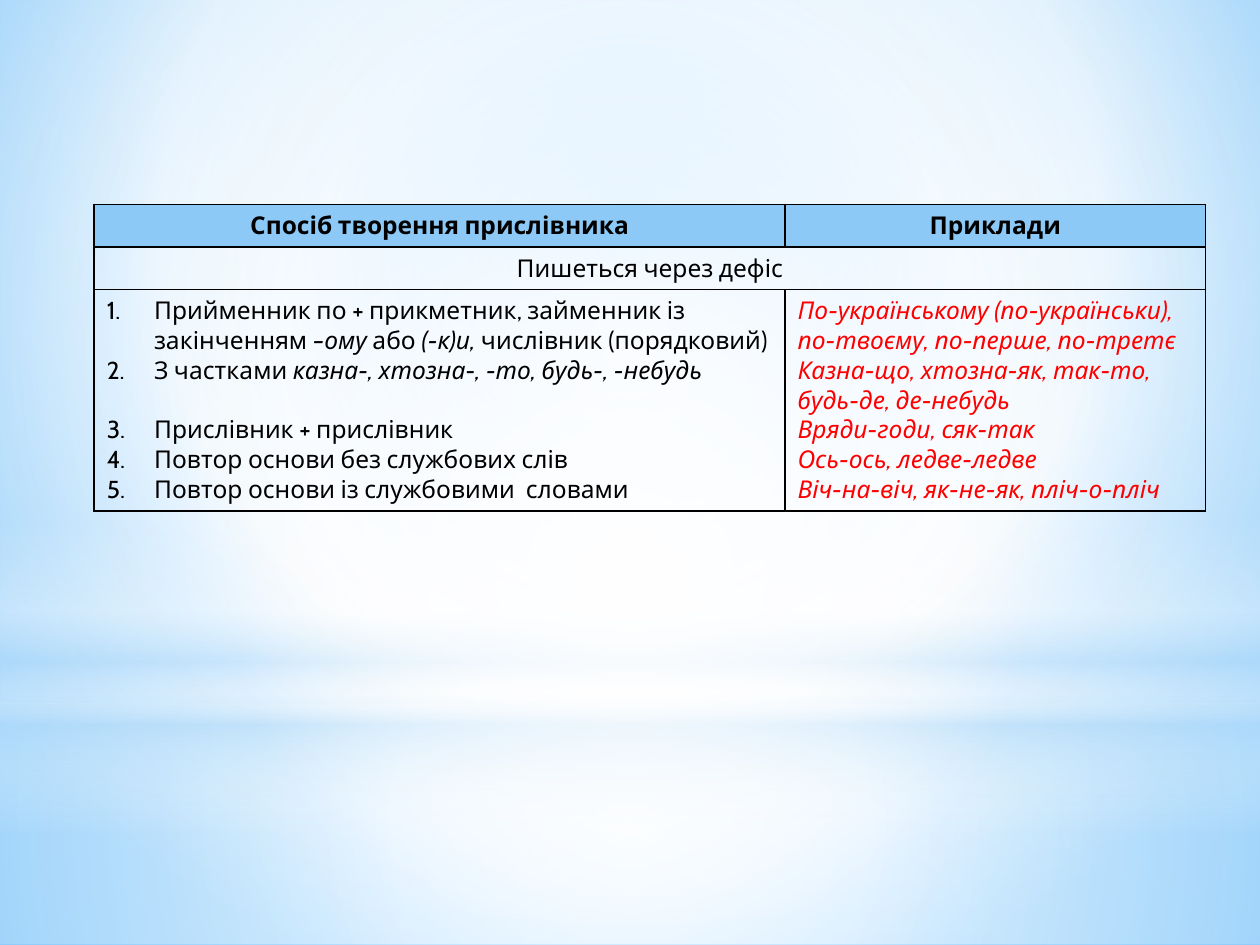
from dataclasses import dataclass

from lxml.etree import SubElement
from pptx import Presentation
from pptx.dml.color import RGBColor
from pptx.enum.shapes import MSO_SHAPE
from pptx.enum.text import PP_ALIGN
from pptx.oxml import parse_xml
from pptx.oxml.ns import nsdecls, qn
from pptx.slide import Slide
from pptx.util import Pt

BLACK = RGBColor(0x00, 0x00, 0x00)
WHITE = RGBColor(0xFF, 0xFF, 0xFF)
RED = RGBColor(0xFF, 0x00, 0x00)
HEADER_BLUE = RGBColor(0x8C, 0xC9, 0xF7)
PALE_BLUE = RGBColor(0xB4, 0xDC, 0xFA)
SKY_BLUE = RGBColor(0x9E, 0xD5, 0xFF)
DEEP_BLUE = RGBColor(0x5B, 0xB9, 0xFF)

WIDTH, HEIGHT, HORIZON = 720, 540, 402
CENTRE = (50, 50, 50, 50)

METHODS = [
    [("Прийменник по + прикметник, займенник із закінченням ", False), ("–ому ", True),
     ("або ", False), ("(-к)и, ", True), ("числівник (порядковий)", False)],
    [("З частками ", False), ("казна-, хтозна-, -то, будь-, -небудь", True)],
    [("Прислівник + прислівник", False)],
    [("Повтор основи без службових слів", False)],
    [("Повтор основи із службовими  словами", False)],
]
EXAMPLES = [
    "По-українському (по-українськи), по-твоєму, по-перше, по-третє",
    "Казна-що, хтозна-як, так-то, будь-де, де-небудь",
    "Вряди-годи, сяк-так",
    "Ось-ось, ледве-ледве",
    "Віч-на-віч, як-не-як, пліч-о-пліч",
]


@dataclass
class SlideBuilder:
    """Draws styled elements on the current slide."""

    slide: Slide
    font_name: str = "Cabin"
    font_size: float = 14
    line_height: float = 17
    indent: float = 27
    border_width: float = 1

    def gradient(self, fill, element, stops, focus=None):
        fill.solid()
        solid = element.find(".//" + qn("a:solidFill"))
        gradient = parse_xml(f'<a:gradFill {nsdecls("a")} rotWithShape="1"/>')
        stop_list = SubElement(gradient, qn("a:gsLst"))
        for position, color, opacity in stops:
            stop = SubElement(stop_list, qn("a:gs"), pos=str(position * 1000))
            tone = SubElement(stop, qn("a:srgbClr"), val=str(color))
            if opacity < 100:
                SubElement(tone, qn("a:alpha"), val=str(opacity * 1000))
        if focus:
            circle = SubElement(gradient, qn("a:path"), path="circle")
            sides = {side: str(value * 1000) for side, value in zip("ltrb", focus)}
            SubElement(circle, qn("a:fillToRect"), **sides)
        else:
            SubElement(gradient, qn("a:lin"), ang="5400000", scaled="0")
        solid.getparent().replace(solid, gradient)

    def background(self, stops, focus):
        self.gradient(self.slide.background.fill, self.slide._element, stops, focus)

    def glow(self, kind, top, height, stops, focus=None):
        shape = self.slide.shapes.add_shape(kind, 0, Pt(top), Pt(WIDTH), Pt(height))
        shape.shadow.inherit = False
        shape.line.fill.background()
        self.gradient(shape.fill, shape._element.spPr, stops, focus)

    def table(self, left, top, column_widths, row_heights):
        table = self.slide.shapes.add_table(
            len(row_heights), len(column_widths), Pt(left), Pt(top),
            Pt(sum(column_widths)), Pt(sum(row_heights))).table
        table.first_row = table.horz_banding = False
        for column, width in zip(table.columns, column_widths):
            column.width = Pt(width)
        for row, height in zip(table.rows, row_heights):
            row.height = Pt(height)
        for cell in table.iter_cells():
            cell.fill.background()
            self.borders(cell)
        return table

    def borders(self, cell):
        properties = cell._tc.get_or_add_tcPr()
        for index, side in enumerate("LRTB"):
            properties.insert(index, parse_xml(
                f'<a:ln{side} {nsdecls("a")} w="{Pt(self.border_width)}"><a:solidFill>'
                f'<a:srgbClr val="{BLACK}"/></a:solidFill></a:ln{side}>'))

    def paragraph(self, cell, index, color=BLACK, bold=False):
        frame = cell.text_frame
        paragraph = frame.add_paragraph() if index else frame.paragraphs[0]
        font = paragraph.font
        font.name, font.size, font.bold = self.font_name, Pt(self.font_size), bold
        font.color.rgb = color
        return paragraph

    def heading(self, cell, text, bold=False, fill=None):
        paragraph = self.paragraph(cell, 0, bold=bold)
        paragraph.text = text
        paragraph.alignment = PP_ALIGN.CENTER
        if fill:
            cell.fill.solid()
            cell.fill.fore_color.rgb = fill

    def numbered_list(self, cell, items, gap_before):
        for index, item in enumerate(items):
            paragraph = self.paragraph(cell, index)
            for text, italic in item:
                run = paragraph.add_run()
                run.text = text
                run.font.italic = italic
            if index == gap_before:
                paragraph.space_before = Pt(self.line_height)
            properties = paragraph._p.get_or_add_pPr()
            properties.set("marL", str(Pt(self.indent)))
            properties.set("indent", str(-Pt(self.indent)))
            number = parse_xml(f'<a:buAutoNum {nsdecls("a")} type="arabicPeriod"/>')
            properties.find(qn("a:defRPr")).addprevious(number)

    def examples(self, cell, lines):
        for index, line in enumerate(lines):
            paragraph = self.paragraph(cell, index, RED)
            paragraph.text = line
            paragraph.font.italic = True


def main():
    presentation = Presentation()
    presentation.slide_width, presentation.slide_height = Pt(WIDTH), Pt(HEIGHT)
    builder = SlideBuilder(presentation.slides.add_slide(presentation.slide_layouts[6]))

    builder.background(
        [(0, SKY_BLUE, 100), (60, WHITE, 100), (100, DEEP_BLUE, 100)], (20, 10, 20, 60))
    builder.glow(MSO_SHAPE.RECTANGLE, HORIZON, HEIGHT - HORIZON,
                 [(0, WHITE, 91), (37, WHITE, 76), (100, PALE_BLUE, 79)], CENTRE)
    builder.glow(MSO_SHAPE.RECTANGLE, 0, HORIZON,
                 [(0, WHITE, 89), (48, WHITE, 62), (100, PALE_BLUE, 79)], CENTRE)
    builder.glow(MSO_SHAPE.RECTANGLE, 297, 180,
                 [(0, WHITE, 0), (29, WHITE, 30), (45, PALE_BLUE, 40),
                  (55, WHITE, 26), (65, PALE_BLUE, 60), (100, WHITE, 0)])
    builder.glow(MSO_SHAPE.OVAL, 126, HORIZON,
                 [(0, WHITE, 100), (56, WHITE, 0)], CENTRE)

    table = builder.table(53.8, 116.8, [394.8, 240.4], [24.4, 24.4, 126.4])
    for column, title in enumerate(["Спосіб творення прислівника", "Приклади"]):
        builder.heading(table.cell(0, column), title, True, HEADER_BLUE)
    table.cell(1, 0).merge(table.cell(1, 1))
    builder.heading(table.cell(1, 0), "Пишеться через дефіс")
    builder.numbered_list(table.cell(2, 0), METHODS, gap_before=2)
    builder.examples(table.cell(2, 1), EXAMPLES)
    presentation.save("out.pptx")


if __name__ == "__main__":
    main()
